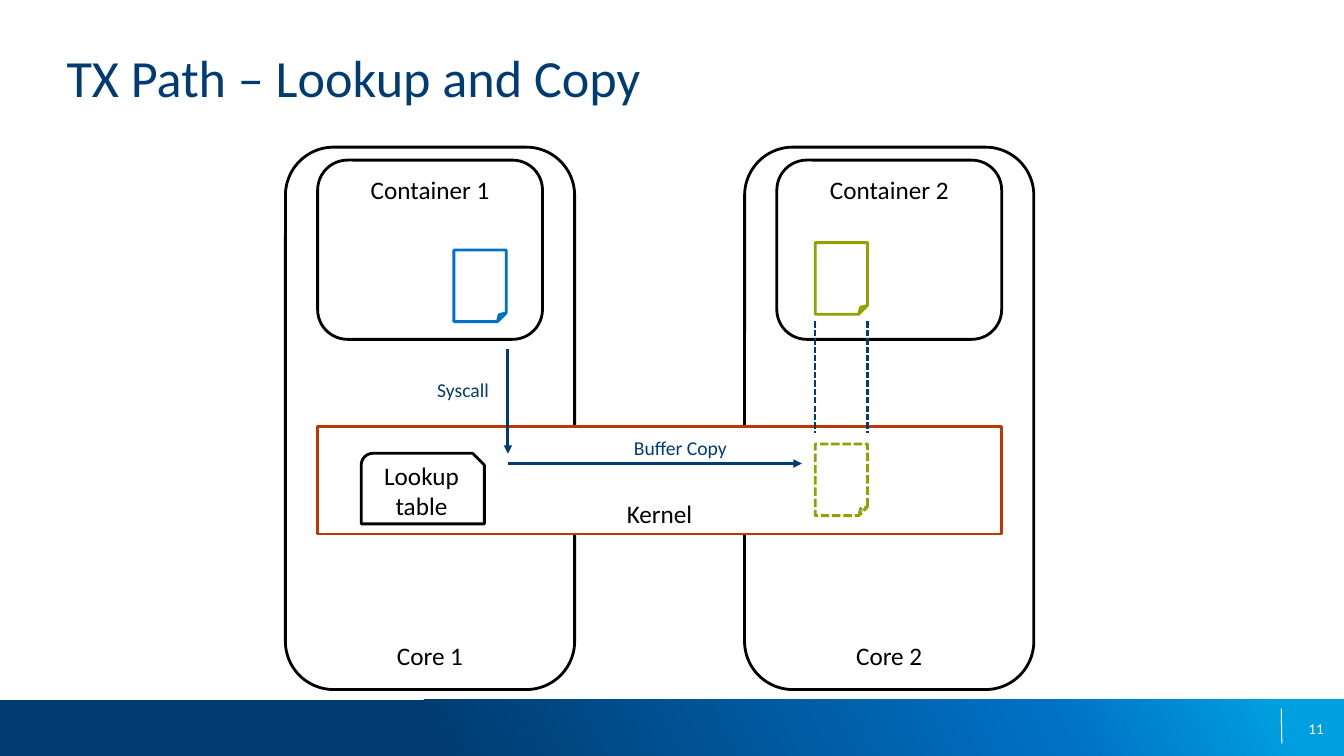
import pptx
import pptx.dml.color
import pptx.enum.dml
import pptx.enum.shapes
import pptx.enum.text
import pptx.oxml
import pptx.oxml.ns
import pptx.util

Pt = pptx.util.Pt
SHAPE = pptx.enum.shapes.MSO_SHAPE
ALIGN = pptx.enum.text.PP_ALIGN
ANCHOR = pptx.enum.text.MSO_ANCHOR
DASH = pptx.enum.dml.MSO_LINE.SQUARE_DOT
NAVY, BLUE, SKY = "003C71", "0071C5", "009FDF"
GREEN, RUST, BLACK, WHITE = "92A000", "BD3901", "000000", "FFFFFF"
SHEET_WIDTH, SHEET_HEIGHT = 37.4, 51.1


def color(value):
    return pptx.dml.color.RGBColor.from_string(value)


def make_element(tag, **attributes):
    element = pptx.oxml.parse_xml(f"<{tag} {pptx.oxml.ns.nsdecls('a')}/>")
    for name, value in attributes.items():
        element.set(name, str(value))
    return element


def write_text(shape, text, size=18, ink=BLACK, align=ALIGN.CENTER,
               anchor=ANCHOR.MIDDLE, inset=None):
    frame = shape.text_frame
    frame.word_wrap = True
    frame.auto_size = pptx.enum.text.MSO_AUTO_SIZE.NONE
    frame.vertical_anchor = anchor
    if inset is not None:
        frame.margin_left = frame.margin_right = Pt(inset)
        frame.margin_top = frame.margin_bottom = Pt(inset)
    para = frame.paragraphs[0]
    para.alignment = align
    span = para.add_run()
    span.text = text
    span.font.name = "Calibri"
    span.font.size = Pt(size)
    span.font.color.rgb = color(ink)


def add_label(page, box, text, **text_format):
    label = page.shapes.add_textbox(*map(Pt, box))
    write_text(label, text, inset=0, **text_format)


def add_box(page, kind, box, outline=BLACK, fill=WHITE, dash=None,
            text=None, **text_format):
    shape = page.shapes.add_shape(kind, *map(Pt, box))
    shape.shadow.inherit = False
    if fill:
        shape.fill.solid()
        shape.fill.fore_color.rgb = color(fill)
    else:
        shape.fill.background()
    shape.line.color.rgb = color(outline)
    shape.line.width = Pt(2)
    if dash:
        shape.line.dash_style = dash
    if text:
        write_text(shape, text, **text_format)
    return shape


def add_line(page, start, end, ink=NAVY, width=2, dash=None, arrow=False):
    line = page.shapes.add_connector(
        pptx.enum.shapes.MSO_CONNECTOR.STRAIGHT, *map(Pt, start + end))
    line.line.color.rgb = color(ink)
    line.line.width = Pt(width)
    if dash:
        line.line.dash_style = dash
    if arrow:
        line.line._get_or_add_ln().append(make_element("a:tailEnd", type="triangle"))
    line._element.spPr.append(make_element("a:effectLst"))


def add_footer(page, box):
    left, top, width, height = box
    band = page.shapes.add_shape(SHAPE.RECTANGLE, *map(Pt, box))
    band.shadow.inherit = False
    band.line.fill.background()
    band.fill.gradient()
    gradient = band._element.spPr.find(pptx.oxml.ns.qn("a:gradFill"))
    for child in list(gradient):
        gradient.remove(child)
    stops = make_element("a:gsLst")
    for percent, value in ((32, NAVY), (78, BLUE), (95, SKY)):
        stop = make_element("a:gs", pos=percent * 1000)
        stop.append(make_element("a:srgbClr", val=value))
        stops.append(stop)
    gradient.append(stops)
    gradient.append(make_element("a:lin", ang=331 * 60000, scaled=0))
    right = left + width
    add_line(page, (right - 44.8, top + 6.5), (right - 44.4, top + 31.5),
             ink=WHITE, width=0.75)
    add_label(page, (right - 238.5, top + 6.5, 224, 28.8), "11",
              size=10.7, ink=WHITE, align=ALIGN.RIGHT)


def add_title(page, box, text):
    title = page.shapes.title
    title.left, title.top, title.width, title.height = map(Pt, box)
    write_text(title, text, size=37.3, ink=NAVY, align=ALIGN.LEFT,
               anchor=ANCHOR.TOP, inset=0)


def add_sheet(page, left, top, outline, **style):
    add_box(page, SHAPE.FOLDED_CORNER, (left, top, SHEET_WIDTH, SHEET_HEIGHT),
            outline, **style)


def add_core(page, box, number, sheet_offset, sheet_outline):
    left, top, width, height = box
    add_box(page, SHAPE.ROUNDED_RECTANGLE, (left + 23, top + 9.3, width - 46, 128),
            text=f"Container {number}", anchor=ANCHOR.TOP)
    add_sheet(page, left + sheet_offset[0], top + sheet_offset[1], sheet_outline)
    add_box(page, SHAPE.ROUNDED_RECTANGLE, box, fill=None,
            text=f"Core {number}", anchor=ANCHOR.BOTTOM)


def add_kernel(page, box):
    left, top, width, height = box
    add_box(page, SHAPE.RECTANGLE, box, RUST, text="Kernel", anchor=ANCHOR.BOTTOM)

    # Target buffer, mapped into container 2
    sheet_left = left + 355.5
    add_sheet(page, sheet_left, top + 12.6, GREEN, dash=DASH)
    for edge in (sheet_left, sheet_left + SHEET_WIDTH):
        add_line(page, (edge, top - 75), (edge, top + 5), width=1.5, dash=DASH)

    # System call and lookup table
    call_left = left + 136
    add_line(page, (call_left, top - 55), (call_left, top + 19.5), arrow=True)
    add_label(page, (left + 85.5, top - 34.5, 44, 17), "Syscall",
              size=14, ink=NAVY, align=ALIGN.LEFT, anchor=ANCHOR.TOP)
    add_box(page, SHAPE.SNIP_ROUND_RECTANGLE, (left + 31.2, top + 19.2, 88, 50.4),
            text="Lookup table")

    # Copy to the target buffer
    add_line(page, (call_left, top + 26.5), (left + 346, top + 26.5), arrow=True)
    add_label(page, (left + 226, top + 6.5, 75.6, 17), "Buffer Copy",
              size=14, ink=NAVY, align=ALIGN.LEFT, anchor=ANCHOR.TOP)


def main():
    deck = pptx.Presentation()
    deck.slide_width, deck.slide_height = Pt(960), Pt(540)
    page = deck.slides.add_slide(deck.slide_layouts[5])
    add_footer(page, (0, 499.7, 960, 40.3))
    add_title(page, (47.5, 32.4, 864, 91.4), "TX Path – Lookup and Copy")
    add_core(page, (531.9, 105.1, 206.6, 387.4), 2, (50.4, 68.2), GREEN)
    add_core(page, (203.9, 105.1, 206.6, 387.4), 1, (120.3, 73.5), BLUE)
    add_kernel(page, (226.8, 304.6, 488.7, 76.8))
    deck.save("out.pptx")


if __name__ == "__main__":
    main()
